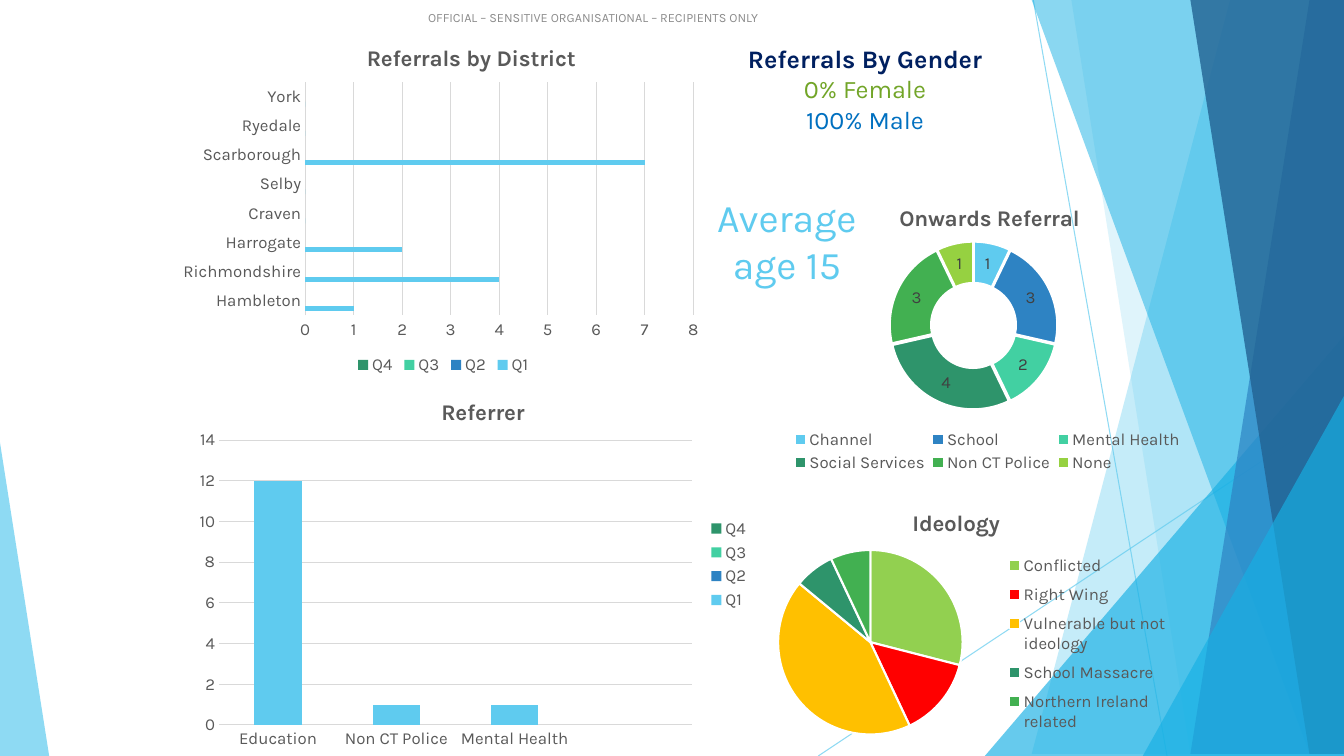
from dataclasses import dataclass

from lxml import etree
from pptx import Presentation
from pptx.chart.data import CategoryChartData
from pptx.dml.color import RGBColor
from pptx.enum.chart import XL_CHART_TYPE, XL_LEGEND_POSITION, XL_TICK_MARK
from pptx.enum.shapes import MSO_CONNECTOR, MSO_SHAPE
from pptx.enum.text import MSO_ANCHOR, PP_ALIGN
from pptx.oxml.ns import qn
from pptx.util import Cm, Pt

BAR, COLUMN = XL_CHART_TYPE.BAR_CLUSTERED, XL_CHART_TYPE.COLUMN_STACKED
DOUGHNUT, PIE = XL_CHART_TYPE.DOUGHNUT, XL_CHART_TYPE.PIE
BOTTOM, RIGHT = XL_LEGEND_POSITION.BOTTOM, XL_LEGEND_POSITION.RIGHT
NO_TICK = XL_TICK_MARK.NONE
STRAIGHT, TRIANGLE = MSO_CONNECTOR.STRAIGHT, MSO_SHAPE.ISOSCELES_TRIANGLE
LEFT, CENTER = PP_ALIGN.LEFT, PP_ALIGN.CENTER
TOP, MIDDLE = MSO_ANCHOR.TOP, MSO_ANCHOR.MIDDLE


@dataclass(frozen=True)
class Theme:
    font: str = "Karla"
    sky: str = "5FCBEF"
    cyan: str = "17B0E4"
    blue: str = "2E83C3"
    deep_blue: str = "226292"
    mint: str = "42D0A2"
    teal: str = "2E946B"
    green: str = "42B051"
    lime: str = "96D141"
    light_green: str = "92D050"
    red: str = "FF0000"
    amber: str = "FFC000"
    navy: str = "002060"
    female: str = "72A528"
    male: str = "0070C0"
    white: str = "FFFFFF"
    grid: str = "D9D9D9"
    body: str = "595959"
    label: str = "404040"
    marking: str = "8C8C8C"
    size_marking: float = 9
    size_chart: float = 12
    size_title: float = 16
    size_gender: float = 18
    size_age: float = 28


@dataclass(frozen=True)
class Box:
    """A region in centimetres."""
    left: float
    top: float
    width: float
    height: float

    def lengths(self):
        return Cm(self.left), Cm(self.top), Cm(self.width), Cm(self.height)


THEME = Theme()
SLIDE = Box(0, 0, 33.87, 19.05)
QUARTER_COLORS = (THEME.sky, THEME.blue, THEME.mint, THEME.teal)


def rgb(color):
    return RGBColor.from_string(color)


def style_font(font, size=THEME.size_chart, color=THEME.body, bold=False):
    font.name, font.size, font.bold = THEME.font, Pt(size), bold
    font.color.rgb = rgb(color)


def add_text(paragraph, text, align=LEFT, **font_format):
    paragraph.alignment = align
    run = paragraph.add_run()
    run.text = text
    style_font(run.font, **font_format)


def add_text_box(slide, box, lines, align=CENTER, anchor=TOP):
    """Each line is a text with its font format."""
    frame = slide.shapes.add_textbox(*box.lengths()).text_frame
    frame.word_wrap = True
    frame.vertical_anchor = anchor
    for index, (text, font_format) in enumerate(lines):
        paragraph = frame.add_paragraph() if index else frame.paragraphs[0]
        add_text(paragraph, text, align, **font_format)


def set_alpha(shape, percent):
    color = next(shape._element.spPr.iter(qn("a:srgbClr")))
    etree.SubElement(color, qn("a:alpha")).set("val", str(percent * 1000))


def fill_facet(shape, color, opacity):
    shape.shadow.inherit = False
    shape.fill.solid()
    shape.fill.fore_color.rgb = rgb(color)
    shape.line.fill.background()
    set_alpha(shape, opacity)


def draw_backdrop(slide, box):
    right, bottom = box.left + box.width, box.top + box.height

    def add_ray(start_x, start_y, end_x):
        ray = slide.shapes.add_connector(
            STRAIGHT, Cm(box.left + start_x), Cm(box.top + start_y),
            Cm(box.left + end_x), Cm(bottom))
        ray.line.color.rgb, ray.line.width = rgb(THEME.sky), Pt(0.75)
        set_alpha(ray, 70)
        etree.SubElement(ray._element.spPr, qn("a:effectLst"))

    def add_band(top_x, bottom_x, color, opacity):
        builder = slide.shapes.build_freeform(box.left + top_x, box.top, scale=Cm(1))
        builder.add_line_segments(
            [(right, box.top), (right, bottom), (box.left + bottom_x, bottom)])
        fill_facet(builder.convert_to_shape(), color, opacity)

    def add_corner(left, top, width, apex, color, opacity):
        region = Box(box.left + left, box.top + top, width, box.height - top)
        shape = slide.shapes.add_shape(TRIANGLE, *region.lengths())
        shape.adjustments[0] = apex
        fill_facet(shape, color, opacity)

    add_ray(26.04, 0, 29.41)
    add_ray(box.width, 10.24, 20.62)
    add_band(31.19, 25.5, THEME.sky, 36)
    add_band(26.67, 30.05, THEME.sky, 20)
    add_corner(24.82, 8.46, 9.05, 1, THEME.cyan, 66)
    add_band(25.93, 32.79, THEME.cyan, 50)
    add_band(33.1, 30.28, THEME.blue, 70)
    add_band(30.38, 33.48, THEME.deep_blue, 80)
    add_corner(28.8, 9.98, 5.07, 1, THEME.cyan, 66)
    add_corner(0, 11.15, 1.24, 0, THEME.sky, 70)


def place_part(part, box, place, after=None, inner=False):
    """Pin a chart part at a place in centimetres inside the chart's box."""
    for old in part.findall(qn("c:layout")):
        part.remove(old)
    layout = etree.Element(qn("c:layout"))
    manual = etree.SubElement(layout, qn("c:manualLayout"))
    values = [("layoutTarget", "inner")] if inner else []
    values += [("xMode", "edge"), ("yMode", "edge")]
    spans = (box.width, box.height) * 2
    values += [(key, f"{length / span:.4f}")
               for key, length, span in zip("xywh", place, spans)]
    for key, value in values:
        etree.SubElement(manual, qn(f"c:{key}")).set("val", value)
    part.insert(0 if after is None else part.index(part.find(qn(after))) + 1, layout)


def add_chart(slide, box, kind, title, categories, series, legend_side,
              title_place, plot_place, legend_place):
    data = CategoryChartData()
    data.categories = categories
    for name, values in series:
        data.add_series(name, values)
    chart = slide.shapes.add_chart(kind, *box.lengths(), data).chart
    style_font(chart.font)
    chart.has_title = chart.has_legend = True
    add_text(chart.chart_title.text_frame.paragraphs[0], title, CENTER,
             size=THEME.size_title, bold=True)
    chart.legend.position = legend_side
    chart.legend.include_in_layout = False
    style_font(chart.legend.font)
    place_part(chart.chart_title._element, box, title_place, "c:tx")
    place_part(chart.legend._element, box, legend_place, "c:legendPos")
    place_part(chart._chartSpace.chart.plotArea, box, plot_place, inner=True)
    return chart


def add_quarter_chart(slide, box, kind, title, categories, first_quarter, gap, step,
                      **places):
    """Bars by quarter, of which only the first has figures."""
    blanks = [None] * len(categories)
    series = [("Q1", first_quarter)] + [(f"Q{number}", blanks) for number in (2, 3, 4)]
    chart = add_chart(slide, box, kind, title, categories, series, **places)
    plot = chart.plots[0]
    plot.gap_width, plot.vary_by_categories = gap, False
    for quarter, color in zip(plot.series, QUARTER_COLORS):
        quarter.format.fill.solid()
        quarter.format.fill.fore_color.rgb = rgb(color)
    for axis in (chart.category_axis, chart.value_axis):
        axis.major_tick_mark = axis.minor_tick_mark = NO_TICK
        style_font(axis.tick_labels.font)
    values = chart.value_axis
    values.major_unit, values.minimum_scale = step, 0
    values.format.line.fill.background()
    for line in (chart.category_axis.format.line, values.major_gridlines.format.line):
        line.color.rgb, line.width = rgb(THEME.grid), Pt(0.75)


def add_share_chart(slide, box, kind, title, name, slices, **places):
    """Round chart; each slice is a category, a value and a colour."""
    categories, values, colors = zip(*slices)
    chart = add_chart(slide, box, kind, title, categories, [(name, values)], **places)
    plot = chart.plots[0]
    plot.vary_by_categories = True
    for index, color in enumerate(colors):
        point = plot.series[0].points[index].format
        point.fill.solid()
        point.fill.fore_color.rgb = rgb(color)
        point.line.color.rgb, point.line.width = rgb(THEME.white), Pt(1.5)
    return plot


def add_onwards_chart(slide, box):
    plot = add_share_chart(
        slide, box, DOUGHNUT, "Onwards Referral", "Series 1",
        [("Channel", 1, THEME.sky), ("School", 3, THEME.blue),
         ("Mental Health", 2, THEME.mint), ("Social Services", 4, THEME.teal),
         ("Non CT Police", 3, THEME.green), ("None", 1, THEME.lime)],
        legend_side=BOTTOM, title_place=(3.87, 0.42),
        plot_place=(3.73, 1.47, 4.23, 4.23), legend_place=(1.15, 6.15, 10.1, 1.2))
    plot._element.find(qn("c:holeSize")).set("val", "75")
    explosion = etree.Element(qn("c:explosion"))
    explosion.set("val", "3")
    plot.series[0]._element.find(qn("c:dPt")).addprevious(explosion)
    plot.has_data_labels = True
    plot.data_labels.show_value = True
    plot.data_labels.show_percentage = False
    style_font(plot.data_labels.font, color=THEME.label)


def main():
    presentation = Presentation()
    presentation.slide_width, presentation.slide_height = SLIDE.lengths()[2:]
    slide = presentation.slides.add_slide(presentation.slide_layouts[6])
    draw_backdrop(slide, SLIDE)
    add_onwards_chart(slide, Box(18.69, 4.62, 12.27, 7.39))
    add_text_box(slide, Box(18.42, 0.97, 6.76, 2.57), [
        (text, {"size": THEME.size_gender, "color": color, "bold": bold})
        for text, color, bold in (("Referrals By Gender", THEME.navy, True),
                                  ("0% Female", THEME.female, False),
                                  ("100% Male", THEME.male, False))])
    add_share_chart(
        slide, Box(17.86, 12.27, 12.24, 6.6), PIE, "Ideology", "Ideology",
        [("Conflicted", 29, THEME.light_green), ("Right Wing", 14, THEME.red),
         ("Vulnerable but not ideology", 43, THEME.amber),
         ("School Massacre", 7, THEME.teal), ("Northern Ireland related", 7, THEME.green)],
        legend_side=RIGHT, title_place=(5.03, 0.45),
        plot_place=(1.75, 1.59, 4.65, 4.65), legend_place=(7.5, 1.5, 4.1, 4.9))
    add_quarter_chart(
        slide, Box(4.37, 0.61, 13.49, 9.02), BAR, "Referrals by District",
        ["Hambleton", "Richmondshire", "Harrogate", "Craven", "Selby", "Scarborough",
         "Ryedale", "York"], [1, 4, 2, 0, 0, 7, 0, 0], gap=182, step=1,
        legend_side=BOTTOM, title_place=(4.77, 0.4),
        plot_place=(3.32, 1.46, 9.78, 5.88), legend_place=(4.5, 8.35, 4.6, 0.6))
    add_quarter_chart(
        slide, Box(4.72, 9.37, 14.35, 9.68), COLUMN, "Referrer",
        ["Education", "Non CT Police", "Mental Health", ""], [12, 1, 1, None],
        gap=150, step=2, legend_side=RIGHT, title_place=(6.3, 0.55),
        plot_place=(0.8, 1.72, 11.92, 7.18), legend_place=(13.05, 3.6, 1.2, 2.5))
    add_text_box(slide, Box(17.58, 4.75, 4.5, 2.64),
                 [("Average age 15", {"size": THEME.size_age, "color": THEME.sky})])
    add_text_box(slide, Box(10.54, -0.08, 13.51, 1.02),
                 [("OFFICIAL – SENSITIVE ORGANISATIONAL – RECIPIENTS ONLY",
                   {"size": THEME.size_marking, "color": THEME.marking})],
                 align=LEFT, anchor=MIDDLE)
    presentation.save("out.pptx")


if __name__ == "__main__":
    main()
